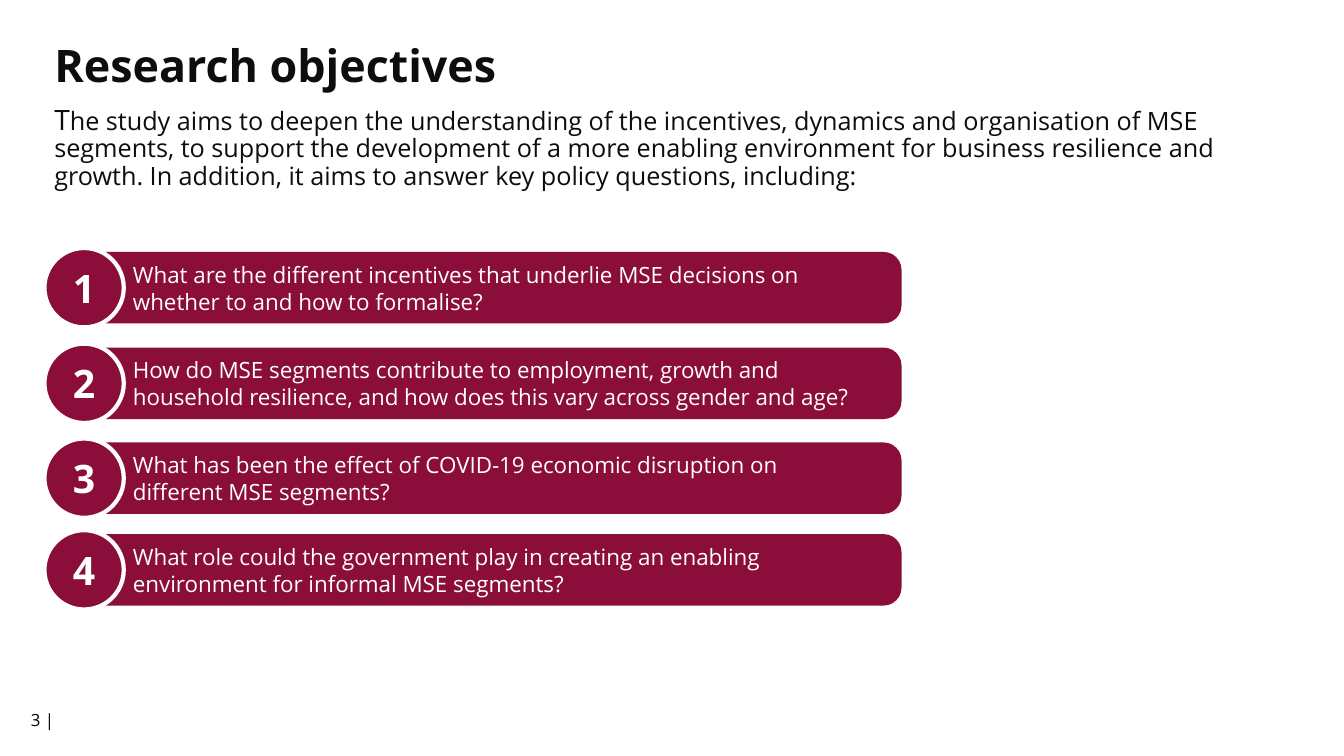
"""Build the research objectives slide with four numbered policy questions."""
from pptx import Presentation
from pptx.dml.color import RGBColor
from pptx.enum.shapes import MSO_SHAPE
from pptx.enum.text import MSO_ANCHOR, PP_ALIGN
from pptx.util import Cm, Pt

TITLE = "Research objectives"
INTRO = ("The study aims to deepen the understanding of the incentives, dynamics and "
         "organisation of MSE segments, to support the development of a more enabling "
         "environment for business resilience and growth. In addition, it aims to answer "
         "key policy questions, including:")
QUESTIONS = [
    (6.35, "What are the different incentives that underlie MSE decisions on "
           "whether to and how to formalise?"),
    (8.76, "How do MSE segments contribute to employment, growth and "
           "household resilience, and how does this vary across gender and age?"),
    (11.15, "What has been the effect of COVID-19 economic disruption on "
            "different MSE segments?"),
    (13.46, "What role could the government play in creating an enabling "
            "environment for informal MSE segments?"),
]
PAGE = "3 |"

THEME = {
    "font": "Open Sans",
    "wine": RGBColor(0x8B, 0x0E, 0x3A),
    "white": RGBColor(0xFF, 0xFF, 0xFF),
    "ink": RGBColor(0x0D, 0x0D, 0x0D),
    "black": RGBColor(0, 0, 0),
    "title": 32, "lead": 20, "intro": 18, "question": 16, "number": 28, "page": 12,
}
BAR_LEFT, BAR_W, BAR_H = 1.62, 21.1, 1.8
CIRCLE_LEFT, CIRCLE_D = 1.12, 2.0


def style(r, size, color, bold=False):
    r.font.name = THEME["font"]
    r.font.size = Pt(THEME[size])
    r.font.color.rgb = THEME[color]
    r.font.bold = bold


def add_box(s, left, top, width, height):
    tf = s.shapes.add_textbox(Cm(left), Cm(top), Cm(width), Cm(height)).text_frame
    tf.word_wrap = True
    return tf


def add_label(s, kind, box, text, size, align, insets=(0, 0), bold=False):
    sp = s.shapes.add_shape(kind, *map(Cm, box))
    sp.shadow.inherit = False
    sp.fill.solid()
    sp.fill.fore_color.rgb = THEME["wine"]
    sp.line.fill.background()
    tf = sp.text_frame
    tf.word_wrap = True
    tf.vertical_anchor = MSO_ANCHOR.MIDDLE
    tf.margin_left, tf.margin_right = map(Cm, insets)
    tf.margin_top = tf.margin_bottom = 0
    p = tf.paragraphs[0]
    p.text = text
    p.alignment = align
    style(p.runs[0], size, "white", bold)
    return sp


def add_heading(s):
    tf = add_box(s, 1.12, 0.97, 30.6, 4.37)
    tf.text = TITLE
    p = tf.paragraphs[0]
    p.space_after = Pt(10)
    p.line_spacing = 0.9
    style(p.runs[0], "title", "ink", True)
    p = tf.add_paragraph()
    p.space_after = Pt(6)
    p.line_spacing = 0.9
    for text, size in ((INTRO[:1], "lead"), (INTRO[1:], "intro")):
        r = p.add_run()
        r.text = text
        style(r, size, "ink")


def add_question(s, number, top, text):
    bar = add_label(s, MSO_SHAPE.ROUNDED_RECTANGLE, (BAR_LEFT, top, BAR_W, BAR_H),
                    text, "question", PP_ALIGN.LEFT, (1.6, 1.0))
    bar.adjustments[0] = 0.25
    circle_top = top - (CIRCLE_D - BAR_H) / 2
    circle = add_label(s, MSO_SHAPE.OVAL, (CIRCLE_LEFT, circle_top, CIRCLE_D, CIRCLE_D),
                       str(number), "number", PP_ALIGN.CENTER, bold=True)
    circle.line.color.rgb = THEME["white"]
    circle.line.width = Pt(3)


def main():
    prs = Presentation()
    prs.slide_width, prs.slide_height = Cm(33.87), Cm(19.05)
    s = prs.slides.add_slide(prs.slide_layouts[6])
    add_heading(s)
    for number, (top, text) in enumerate(QUESTIONS, 1):
        add_question(s, number, top, text)
    tf = add_box(s, 0.53, 17.75, 1.75, 1.02)
    tf.text = PAGE
    style(tf.paragraphs[0].runs[0], "page", "black")
    prs.save("out.pptx")


if __name__ == "__main__":
    main()
